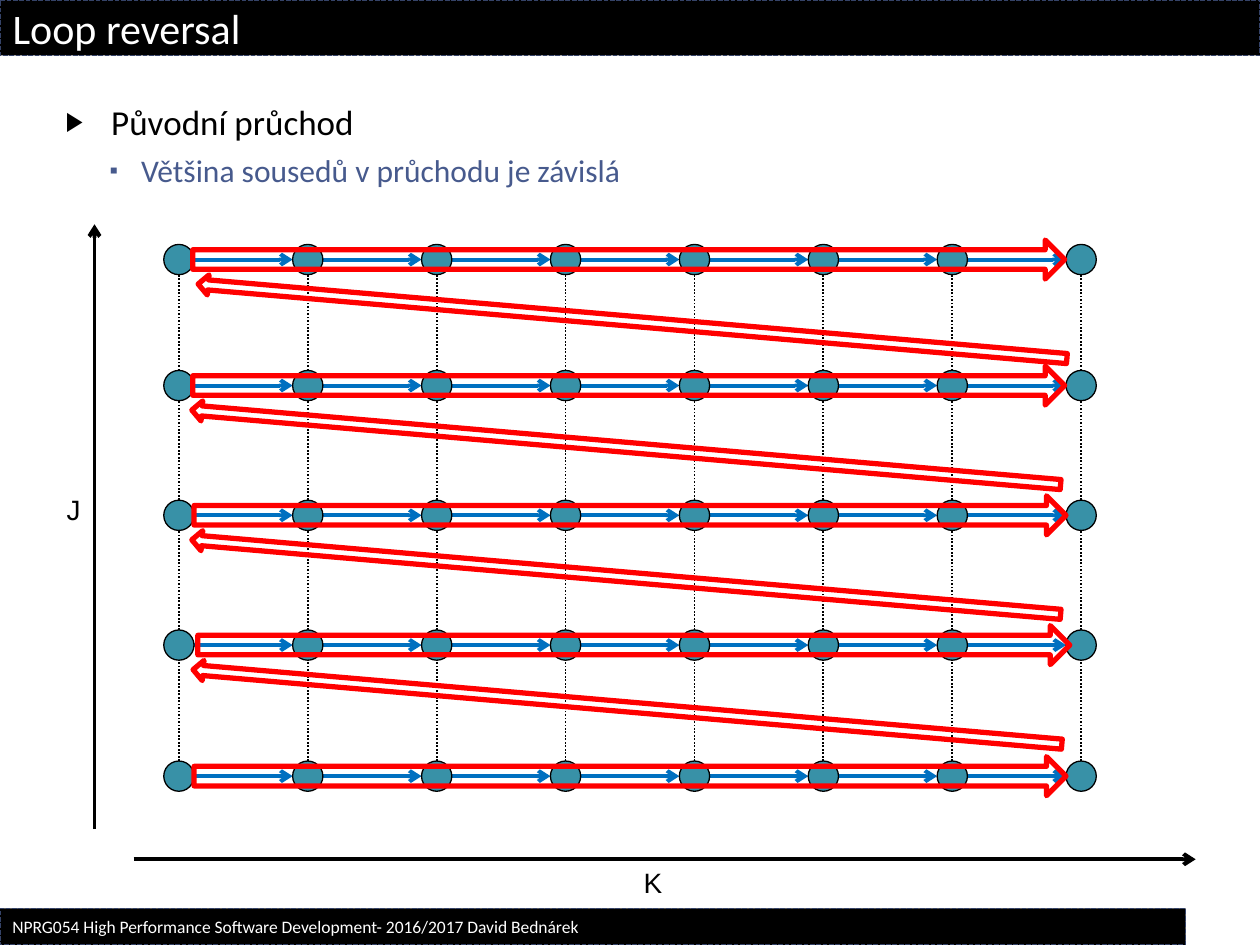
from lxml import etree
from pptx import Presentation
from pptx.dml.color import RGBColor
from pptx.enum.dml import MSO_LINE
from pptx.enum.shapes import MSO_CONNECTOR, MSO_SHAPE
from pptx.enum.text import MSO_ANCHOR, MSO_AUTO_SIZE, PP_ALIGN
from pptx.oxml.ns import qn
from pptx.util import Inches, Pt

STRAIGHT = MSO_CONNECTOR.STRAIGHT
OVAL, RECTANGLE, ARROW = MSO_SHAPE.OVAL, MSO_SHAPE.RECTANGLE, MSO_SHAPE.RIGHT_ARROW
DOTTED, DASHED = MSO_LINE.ROUND_DOT, MSO_LINE.SQUARE_DOT
MIDDLE, LEFT = MSO_ANCHOR.MIDDLE, PP_ALIGN.LEFT

BLACK, WHITE, RED, BLUE = "000000", "FFFFFF", "FF0000", "0070C0"
TEAL, SLATE, BORDER = "3891A7", "475A8D", "354368"


def paint(target, color):
    """Colour a fill, or a font or line by its own colour."""
    if hasattr(target, "solid"):
        target.solid()
        target.fore_color.rgb = RGBColor.from_string(color)
    else:
        target.color.rgb = RGBColor.from_string(color)


def connect(shapes, x1, y1, x2, y2, color, width, arrow=True):
    """Straight line with an open arrowhead, or a dotted one without."""
    link = shapes.add_connector(STRAIGHT, Inches(x1), Inches(y1), Inches(x2), Inches(y2))
    paint(link.line, color)
    link.line.width = Pt(width)
    etree.SubElement(link._element.spPr, qn("a:effectLst"))
    if arrow:
        etree.SubElement(link.line._ln, qn("a:tailEnd"), type="arrow")
    else:
        link.line.dash_style = DOTTED


prs = Presentation()
prs.slide_width, prs.slide_height = Inches(10), Inches(7.5)
slide = prs.slides.add_slide(prs.slide_layouts[1])
title, body = slide.shapes.title, slide.placeholders[1]

# Bulleted list
body.left, body.top, body.width, body.height = map(Inches, (0.12, 0.6, 9.76, 1.1))
points = body.text_frame
points.vertical_anchor, points.auto_size = MIDDLE, MSO_AUTO_SIZE.NONE
bullets = [
    (" Původní průchod", 1, 20, BLACK, "▶", 0.6, -0.3),
    ("Většina sousedů v průchodu je závislá", 2, 18, SLATE, "▪", 0.9, -0.25),
]
for i, (words, level, size, color, mark, margin, indent) in enumerate(bullets):
    point = points.add_paragraph() if i else points.paragraphs[0]
    point.level, point.space_before, point.alignment = level, Pt(5), LEFT
    run = point.add_run()
    run.text = words
    run.font.size, run.font.name = Pt(size), "Calibri"
    paint(run.font, color)
    props = point._p.get_or_add_pPr()
    props.set("marL", str(Inches(margin)))
    props.set("indent", str(Inches(indent)))
    etree.SubElement(etree.SubElement(props, qn("a:buClr")), qn("a:srgbClr"), val=color)
    etree.SubElement(props, qn("a:buSzPct"), val="76000")
    etree.SubElement(props, qn("a:buFont"), typeface="Arial")
    etree.SubElement(props, qn("a:buChar"), char=mark)

# Iteration grid: 8 columns of K, 5 rows of J
columns = [1.42 + 1.023 * k for k in range(8)]
rows = [2.06, 3.06, 4.09, 5.12, 6.16]
radius = 0.12
grid = slide.shapes.add_group_shape().shapes
for x in columns:
    for upper, lower in zip(rows, rows[1:]):
        connect(grid, x, lower - radius, x, upper + radius, BLACK, 1, arrow=False)
for y in rows:
    for x, following in zip(columns, columns[1:]):
        connect(grid, x + radius, y, following - radius, y, BLUE, 2.25)
    for x in columns:
        node = grid.add_shape(OVAL, Inches(x - radius), Inches(y - radius),
                              Inches(2 * radius), Inches(2 * radius))
        node.shadow.inherit = False
        paint(node.fill, TEAL)
        paint(node.line, BLACK)
        node.line.width = Pt(0.75)

# Axes and their letters
connect(grid, 1.06, 6.82, 9.49, 6.82, BLACK, 2.25)
connect(grid, 0.75, 6.58, 0.75, 1.78, BLACK, 2.25)
for letter, x, y, width in [("K", 5.01, 6.82, 0.35), ("J", 0.43, 3.86, 0.31)]:
    axis = grid.add_textbox(Inches(x), Inches(y), Inches(width), Inches(0.37))
    axis.text_frame.word_wrap = False
    axis.text_frame.auto_size = MSO_AUTO_SIZE.SHAPE_TO_FIT_TEXT
    run = axis.text_frame.paragraphs[0].add_run()
    run.text = letter
    run.font.size, run.font.name = Pt(16), "Arial"
    paint(run.font, BLACK)

# Traversal: forward along each row, then back down to the next one
forward_starts = [1.53, 1.53, 1.54, 1.57, 1.54]
return_starts = [1.56, 1.51, 1.51, 1.52]
passes = [(x, y, 0.31, 0) for x, y in zip(forward_starts, rows)]
passes += [(x, y + 0.49, 0.16, 184.9) for x, y in zip(return_starts, rows)]
traversal = slide.shapes.add_group_shape().shapes
for x, middle, height, angle in passes:
    sweep = traversal.add_shape(ARROW, Inches(x), Inches(middle - height / 2),
                                Inches(6.92), Inches(height))
    sweep.rotation = angle
    sweep.shadow.inherit = False
    sweep.fill.background()
    paint(sweep.line, RED)
    sweep.line.width = Pt(3)

# Title bar and footer bar
footer = slide.shapes.add_shape(RECTANGLE, 0, Inches(7.21), Inches(9.41), Inches(0.29))
footer.shadow.inherit = False
title.left, title.top, title.width, title.height = 0, 0, prs.slide_width, Inches(0.44)
course = "NPRG054 High Performance Software Development- 2016/2017 David Bednárek"
for bar, words, size in [(title, "Loop reversal", 24), (footer, course, 10)]:
    paint(bar.fill, BLACK)
    paint(bar.line, BORDER)
    bar.line.width, bar.line.dash_style = Pt(0.9), DASHED
    frame = bar.text_frame
    frame.vertical_anchor, frame.auto_size = MIDDLE, MSO_AUTO_SIZE.NONE
    frame.paragraphs[0].alignment = LEFT
    run = frame.paragraphs[0].add_run()
    run.text = words
    run.font.size, run.font.name = Pt(size), "Calibri"
    paint(run.font, WHITE)

prs.save("out.pptx")
